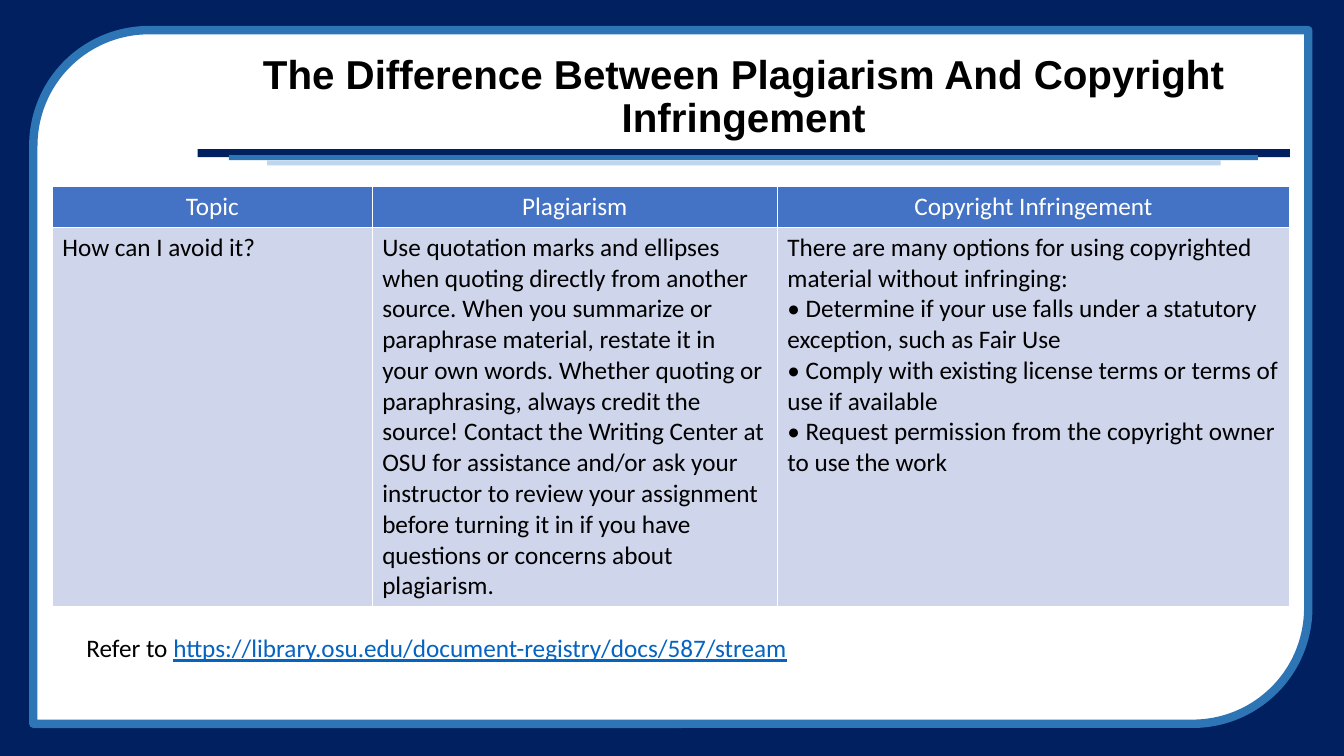
from dataclasses import dataclass

from lxml import etree
from pptx import Presentation
from pptx import util as u
from pptx.dml.color import RGBColor
from pptx.enum import shapes, text
from pptx.oxml.ns import qn


@dataclass(frozen=True)
class Theme:
    navy: str = "002060"
    blue: str = "2E75B6"
    pale: str = "BDD7EE"
    header: str = "4472C4"
    body: str = "CFD5EA"
    link: str = "0563C1"
    white: str = "FFFFFF"
    black: str = "000000"
    title_size: float = 28.8
    text_size: float = 18


THEME = Theme()
TITLE = dict(name="Arial", size=u.Pt(THEME.title_size), bold=True)
BODY = dict(name="Calibri", size=u.Pt(THEME.text_size), bold=False)


def add_block(kind, left, top, width, height, color):
    block = page.shapes.add_shape(
        kind, u.Cm(left), u.Cm(top), u.Cm(width), u.Cm(height))
    block.shadow.inherit = False
    block.fill.solid()
    block.fill.fore_color.rgb = RGBColor.from_string(color)
    block.line.fill.background()
    return block


def write(para, words, color, style):
    """Append a formatted span to a paragraph."""
    span = para.add_run()
    span.text = words
    span.font.color.rgb = RGBColor.from_string(color)
    for name, value in style.items():
        setattr(span.font, name, value)


deck = Presentation()
deck.slide_width, deck.slide_height = u.Cm(33.87), u.Cm(19.05)
page = deck.slides.add_slide(deck.slide_layouts[5])

# Frame
RECT = shapes.MSO_SHAPE.RECTANGLE
add_block(RECT, 0, 0, 33.87, 19.05, THEME.navy)
panel = add_block(shapes.MSO_SHAPE.ROUND_2_DIAG_RECTANGLE,
                  0.84, 0.76, 32.13, 17.48, THEME.white)
panel.line.color.rgb = RGBColor.from_string(THEME.blue)
panel.line.width = u.Pt(6)

# Stripes under the title
for left, top, width, height, color in [
    (4.98, 3.76, 27.53, 0.2, THEME.navy),
    (5.77, 3.91, 25.93, 0.13, THEME.blue),
    (6.73, 4.04, 24.03, 0.13, THEME.pale),
]:
    add_block(RECT, left, top, width, height, color)

# Title, brought in front of the frame
title = page.shapes.title
page.shapes._spTree.append(title._element)
title.left, title.top = u.Cm(4.98), u.Cm(1.24)
title.width, title.height = u.Cm(27.53), u.Cm(2.46)
title.text_frame.auto_size = text.MSO_AUTO_SIZE.NONE
title.text_frame.vertical_anchor = text.MSO_ANCHOR.MIDDLE
para = title.text_frame.paragraphs[0]
para.alignment = text.PP_ALIGN.CENTER
para.line_spacing = 0.9
write(para, "The Difference Between Plagiarism And Copyright Infringement",
      THEME.black, TITLE)

# Comparison table: each cell is a list of paragraphs
ROWS = [
    [["Topic"], ["Plagiarism"], ["Copyright Infringement"]],
    [
        ["How can I avoid it?"],
        ["Use quotation marks and ellipses when quoting directly from another "
         "source. When you summarize or paraphrase material, restate it in your "
         "own words. Whether quoting or paraphrasing, always credit the source! "
         "Contact the Writing Center at OSU for assistance and/or ask your "
         "instructor to review your assignment before turning it in if you have "
         "questions or concerns about plagiarism."],
        ["There are many options for using copyrighted material without "
         "infringing:",
         "• Determine if your use falls under a statutory exception, such as "
         "Fair Use",
         "• Comply with existing license terms or terms of use if available",
         "• Request permission from the copyright owner to use the work"],
    ],
]
ROW_STYLES = [
    (THEME.header, THEME.white, text.PP_ALIGN.CENTER),
    (THEME.body, THEME.black, text.PP_ALIGN.LEFT),
]
WIDTHS = [8.06, 10.21, 12.91]
HEIGHTS = [1.02, 9.55]
table = page.shapes.add_table(
    len(ROWS), len(WIDTHS), u.Cm(1.32), u.Cm(4.7),
    u.Cm(sum(WIDTHS)), u.Cm(sum(HEIGHTS))).table
for column, width in zip(table.columns, WIDTHS):
    column.width = u.Cm(width)
for row, height, contents, (fill, color, align) in zip(
        table.rows, HEIGHTS, ROWS, ROW_STYLES):
    row.height = u.Cm(height)
    for cell, lines in zip(row.cells, contents):
        props = cell._tc.get_or_add_tcPr()
        for side in ("lnL", "lnR", "lnT", "lnB"):
            border = etree.SubElement(props, qn(f"a:{side}"), w=str(u.Pt(1)))
            solid = etree.SubElement(border, qn("a:solidFill"))
            etree.SubElement(solid, qn("a:srgbClr"), val=THEME.white)
        cell.fill.solid()
        cell.fill.fore_color.rgb = RGBColor.from_string(fill)
        for index, line in enumerate(lines):
            frame = cell.text_frame
            para = frame.add_paragraph() if index else frame.paragraphs[0]
            para.alignment = align
            write(para, line, color, BODY)

# Reference
box = page.shapes.add_textbox(u.Cm(1.93), u.Cm(15.82), u.Cm(24.77), u.Cm(1.02))
box.text_frame.word_wrap = True
para = box.text_frame.paragraphs[0]
write(para, "Refer to ", THEME.black, BODY)
write(para, "https://library.osu.edu/document-registry/docs/587/stream",
      THEME.link, BODY | dict(underline=True))

deck.save("out.pptx")
